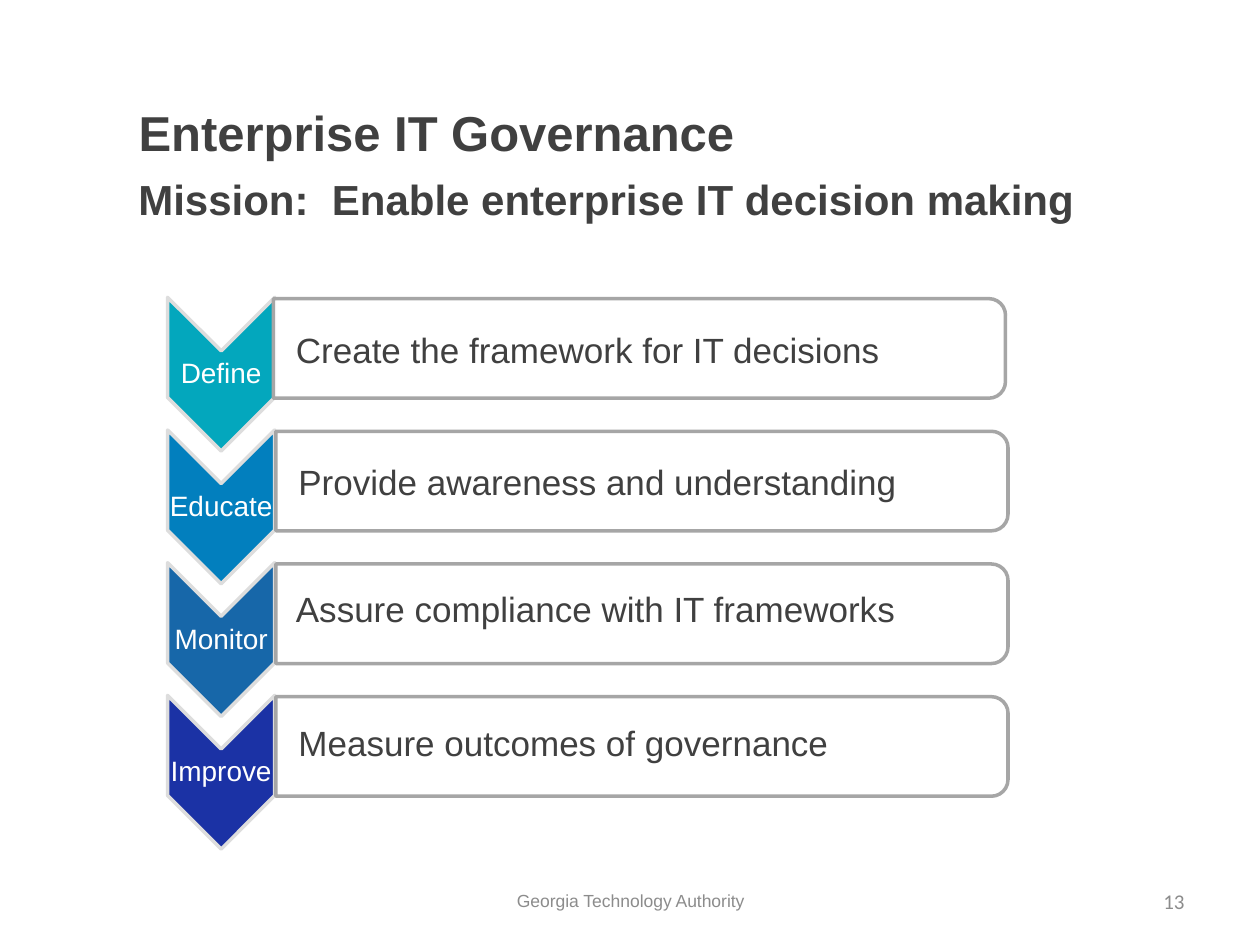
from pptx import Presentation
from pptx.dml.color import RGBColor
from pptx.enum import shapes as sh, text as tx
from pptx.oxml import parse_xml
from pptx.oxml.ns import nsdecls
from pptx.util import Inches, Pt

DARK, GREY, WHITE = "404040", "8C8C8C", "FFFFFF"
PITCH = 1.053
# stage, colour, statement, bar left, statement top within the row
ROWS = [
    ("Define", "03A7BD", "Create the framework for IT decisions", 2.17, 0.2),
    ("Educate", "027FBE", "Provide awareness and understanding", 2.19, 0.19),
    ("Monitor", "1767A9", "Assure compliance with IT frameworks", 2.19, 0.15),
    ("Improve", "1B32A5", "Measure outcomes of governance", 2.19, 0.16),
]


def rgb(code):
    return RGBColor.from_string(code)


def write(frame, words, size, color, bold=False, face="Arial",
          align=tx.PP_ALIGN.LEFT, anchor=tx.MSO_ANCHOR.TOP):
    frame.word_wrap = True
    frame.vertical_anchor = anchor
    para = frame.paragraphs[0]
    para.alignment = align
    run = para.add_run()
    run.text = words
    font = run.font
    font.size, font.name, font.bold = Pt(size), face, bold
    font.color.rgb = rgb(color)
    return para


def label(slide, box, words, size, color, **style):
    """Add a text box holding one run."""
    frame = slide.shapes.add_textbox(*map(Inches, box)).text_frame
    return frame, write(frame, words, size, color, **style)


def turned(slide, kind, box, fill, line):
    """Add a shape turned a quarter right so that it fills the box."""
    left, top, wide, high = box
    shape = slide.shapes.add_shape(
        kind, Inches(left + (wide - high) / 2), Inches(top + (high - wide) / 2),
        Inches(high), Inches(wide))
    shape.rotation = 90
    shape.shadow.inherit = False
    shape.fill.solid()
    shape.fill.fore_color.rgb = rgb(fill)
    shape.line.color.rgb = rgb(line)
    shape.line.width = Pt(2)
    return shape


def head(slide, left, top):
    title = slide.shapes.title
    title.left, title.top = Inches(left), Inches(top)
    title.width, title.height = Inches(8.5), Inches(1.25)
    write(title.text_frame, "Enterprise IT Governance", 28, DARK, bold=True,
          anchor=tx.MSO_ANCHOR.MIDDLE)
    label(slide, (left, top + 0.91, 7.67, 0.81),
          "Mission:  Enable enterprise IT decision making", 24, DARK, bold=True)


def stage(slide, left, top, name, color, words, edge, drop):
    """Draw one chevron with its label, bar and statement."""
    turned(slide, sh.MSO_SHAPE.CHEVRON, (left, top, 0.85, 1.22),
           color, "DDDDDD")
    frame, para = label(slide, (left, top + 0.43, 0.85, 0.37), name, 16, WHITE,
                        align=tx.PP_ALIGN.CENTER, anchor=tx.MSO_ANCHOR.MIDDLE)
    frame.margin_left = frame.margin_right = Inches(0.01)
    frame.margin_top = frame.margin_bottom = Inches(0.01)
    para.line_spacing = 0.9
    bar = turned(slide, sh.MSO_SHAPE.ROUND_2_SAME_RECTANGLE,
                 (edge, top + 0.01, 5.81, 0.79), WHITE, "A6A6A6")
    tint = bar.fill._xPr.solidFill[0]
    tint.append(parse_xml(f'<a:alpha {nsdecls("a")} val="90000"/>'))
    indent = 2.27 if words[0] in "PM" else 2.25
    label(slide, (indent, top + drop, 5.1, 0.44), words, 20, DARK)


def foot(slide, top):
    middle = tx.MSO_ANCHOR.MIDDLE
    label(slide, (3.42, top, 3.17, 0.4), "Georgia Technology Authority", 10,
          GREY, align=tx.PP_ALIGN.CENTER, anchor=middle)
    label(slide, (7.17, top, 2.33, 0.4), "13", 12, GREY, face="Calibri",
          align=tx.PP_ALIGN.RIGHT, anchor=middle)


def main():
    deck = Presentation()
    deck.slide_width, deck.slide_height = Inches(10), Inches(7.5)
    slide = deck.slides.add_slide(deck.slide_layouts[5])
    head(slide, 1, 0.42)
    for i, row in enumerate(ROWS):
        stage(slide, 1.33, 2.36 + i * PITCH, *row)
    foot(slide, 6.95)
    deck.save("out.pptx")


if __name__ == "__main__":
    main()
